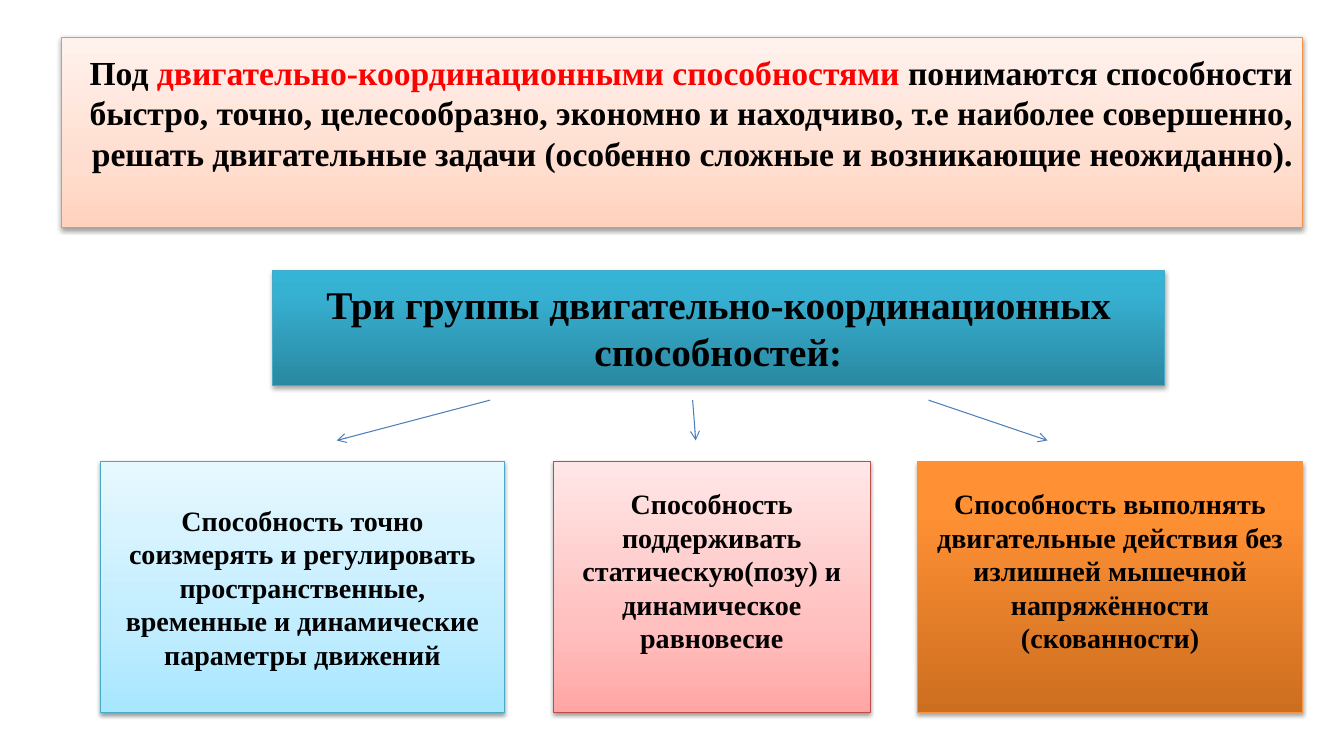
from copy import deepcopy

from lxml.etree import SubElement
from pptx import Presentation
from pptx.dml.color import RGBColor
from pptx.enum.shapes import MSO_CONNECTOR as Link, MSO_SHAPE as Preset
from pptx.enum.text import MSO_ANCHOR as Anchor, MSO_AUTO_SIZE as Fit, PP_ALIGN as Align
from pptx.oxml.ns import qn
from pptx.util import Inches, Pt

COLORS = {"text": "000000", "accent": "FF0000", "arrow": "4B7EBC", "shadow": "000000"}
# Each theme: gradient stops from bottom to top, outline colour, shadow opacity and distance
SOFT, STRONG = (0.38, 1.6), (0.35, 1.8)
THEMES = {
    "peach": ([(0, "FFD2BD"), (0.35, "FFDED0"), (1, "FFF2ED")], "F69240", SOFT),
    "teal": ([(0, "2A88A2"), (0.8, "37B1D2"), (1, "34B4D6")], "46AAC5", STRONG),
    "sky": ([(0, "A7E6FF"), (0.35, "C1EDFF"), (1, "E7F8FF")], "46AAC5", SOFT),
    "rose": ([(0, "FFA6A5"), (0.35, "FFC0BF"), (1, "FFE7E7")], "BF4C48", SOFT),
    "orange": ([(0, "CC6E20"), (0.8, "FF9034"), (1, "FF9136")], "F69240", STRONG),
}
DEFINITION = [
    ("Под ", "text"),
    ("двигательно-координационными способностями ", "accent"),
    ("понимаются способности быстро, точно, целесообразно, экономно и находчиво, "
     "т.е наиболее совершенно, решать двигательные задачи "
     "(особенно сложные и возникающие неожиданно).", "text"),
]
HEADING = [("Три группы двигательно-координационных способностей:", "text")]
# Each group: left, width, theme, room kept free below the text, wording
GROUPS = [
    (1, 4, "sky", 0.05, "Способность точно соизмерять и регулировать пространственные, "
                        "временные и динамические параметры движений"),
    (5.49, 3.14, "rose", 0.38, "Способность поддерживать статическую(позу) "
                               "и динамическое равновесие"),
    (9.1, 3.82, "orange", 0.38, "Способность выполнять двигательные действия без излишней "
                                "мышечной напряжённости (скованности)"),
]
GROUP_TOP, GROUP_HEIGHT = 4.58, 2.49
ARROW_TOP, ARROW_BOTTOM = 3.97, 4.37
ARROWS = [(4.86, 3.34), (6.87, 6.9), (9.21, 10.39)]


def rgb(name):
    return RGBColor.from_string(COLORS.get(name, name))


def paint(shape, theme):
    """Give a shape its vertical gradient, thin outline and soft shadow."""
    stops, outline, (opacity, distance) = THEMES[theme]
    shape.fill.gradient()
    shape.fill.gradient_angle = 90
    stop_list = shape._element.spPr.find(".//" + qn("a:gsLst"))
    stop_list.append(deepcopy(stop_list[0]))
    for stop, (position, color) in zip(shape.fill.gradient_stops, stops):
        stop.position = position
        stop.color.rgb = rgb(color)
    shape.line.color.rgb = rgb(outline)
    shape.line.width = Pt(0.75)
    shape.shadow.inherit = False
    effects = shape._element.spPr.find(qn("a:effectLst"))
    shadow = SubElement(effects, qn("a:outerShdw"), blurRad=str(Pt(3.1)),
                        dist=str(Pt(distance)), dir="5400000", rotWithShape="0")
    color = SubElement(shadow, qn("a:srgbClr"), val=COLORS["shadow"])
    SubElement(color, qn("a:alpha"), val=str(round(opacity * 100000)))


def write(shape, spans, size, align=Align.CENTER, bottom=0.05):
    frame = shape.text_frame
    frame.word_wrap = True
    frame.auto_size = Fit.NONE
    frame.vertical_anchor = Anchor.MIDDLE
    frame.margin_bottom = Inches(bottom)
    para = frame.paragraphs[0]
    para.alignment = align
    for wording, color in spans:
        span = para.add_run()
        span.text = wording
        span.font.name = "Times New Roman"
        span.font.size = Pt(size)
        span.font.bold = True
        span.font.color.rgb = rgb(color)


def add_box(slide, left, top, width, height, theme):
    box = slide.shapes.add_shape(Preset.RECTANGLE, *map(Inches, (left, top, width, height)))
    paint(box, theme)
    return box


def add_arrow(slide, start, end):
    arrow = slide.shapes.add_connector(
        Link.STRAIGHT, *map(Inches, (start, ARROW_TOP, end, ARROW_BOTTOM)))
    arrow.line.color.rgb = rgb("arrow")
    arrow.line.width = Pt(0.75)
    SubElement(arrow.line._get_or_add_ln(), qn("a:tailEnd"), type="arrow")
    SubElement(arrow._element.spPr, qn("a:effectLst"))


def main():
    deck = Presentation()
    deck.slide_width, deck.slide_height = Inches(13.33), Inches(7.5)
    slide = deck.slides.add_slide(deck.slide_layouts.get_by_name("Title Only"))

    definition = add_box(slide, 0.61, 0.37, 12.31, 1.89, "peach")
    write(definition, DEFINITION, 24, align=Align.RIGHT, bottom=0.45)

    heading = slide.shapes.title
    heading.left, heading.top, heading.width, heading.height = map(
        Inches, (2.7, 2.68, 8.85, 1.14))
    paint(heading, "teal")
    write(heading, HEADING, 28)

    for left, width, theme, bottom, wording in GROUPS:
        box = add_box(slide, left, GROUP_TOP, width, GROUP_HEIGHT, theme)
        write(box, [(wording, "text")], 20, bottom=bottom)
    for start, end in ARROWS:
        add_arrow(slide, start, end)
    deck.save("out.pptx")


if __name__ == "__main__":
    main()
